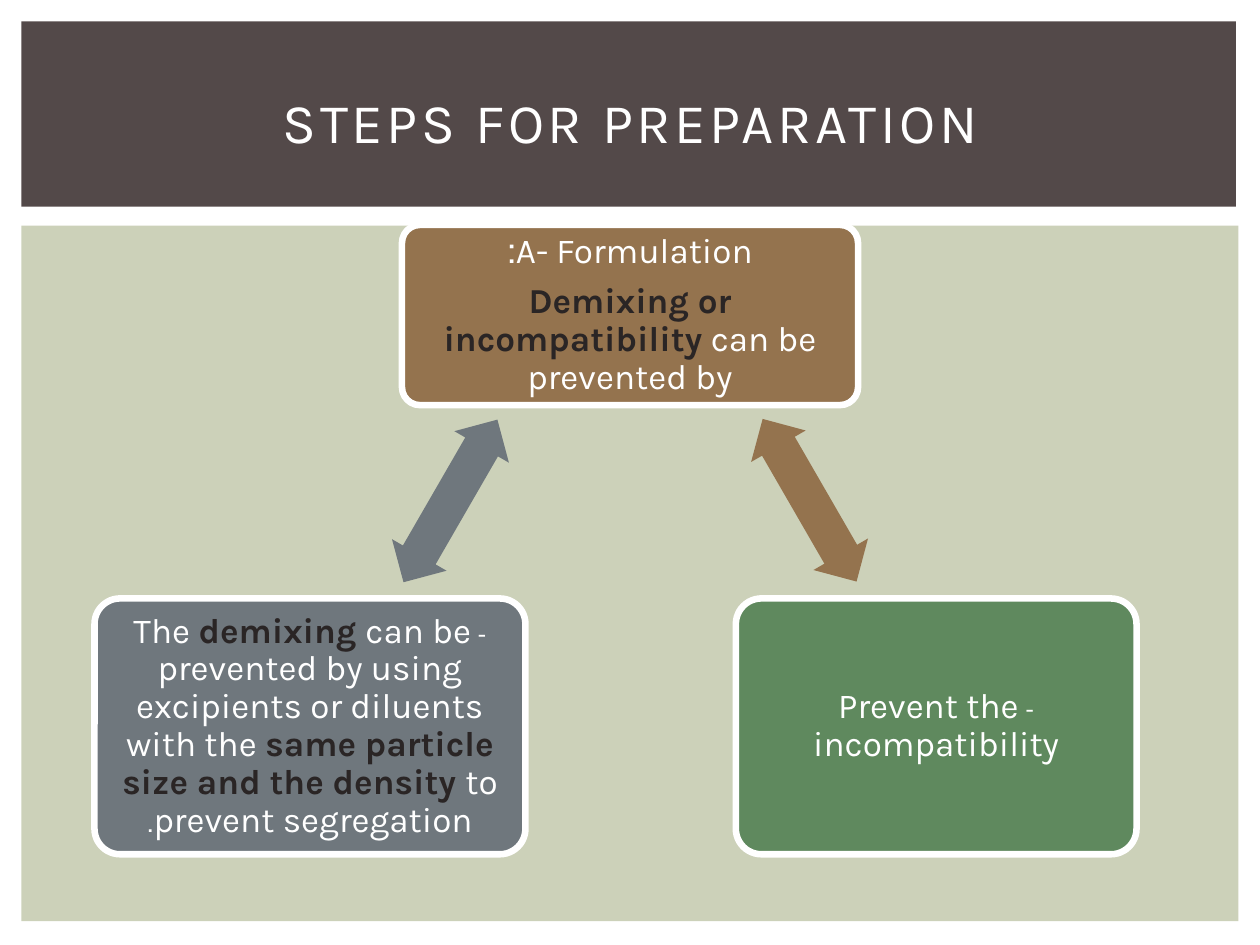
from dataclasses import dataclass

import pptx
import pptx.dml.color
import pptx.enum.shapes
import pptx.enum.text
import pptx.util

WIDTH, HEIGHT = 10, 7.5
FONT = "Karla"
WHITE, DARK = "FFFFFF", "2A2525"
SAGE, UMBER = "CCD1B9", "534949"
BROWN, GREEN, SLATE = "94734E", "5F895E", "6F777D"
SHAPES = pptx.enum.shapes.MSO_SHAPE


@dataclass
class Area:
    left: float
    top: float
    width: float
    height: float

    def lengths(self) -> list:
        shares = ((self.left, WIDTH), (self.top, HEIGHT),
                  (self.width, WIDTH), (self.height, HEIGHT))
        return [pptx.util.Inches(share * full / 100) for share, full in shares]


@dataclass
class Span:
    text: str
    strong: bool = False
    size: int = 20


@dataclass
class Step:
    area: Area
    color: str
    inset: float
    paragraphs: list[list[Span]]


@dataclass
class Arrow:
    area: Area
    color: str
    rotation: int


PANELS = [
    (Area(1.7, 23.87, 96.6, 73.6), SAGE),
    (Area(1.7, 2.27, 96.4, 19.6), UMBER),
]

STEPS = [
    Step(Area(31.9, 23.8, 36.2, 19.07), BROWN, 0.09, [
        [Span("A- Formulation:")],
        [Span("Demixing or incompatibility", True),
         Span(" can be prevented by")],
    ]),
    Step(Area(58.4, 63.33, 31.8, 27.07), GREEN, 0.05, [
        [Span("- ", size=15), Span("Prevent the incompatibility")],
    ]),
    Step(Area(7.5, 63.33, 34.2, 27.07), SLATE, 0.05, [
        [Span("- ", size=15),
         Span("The "),
         Span("demixing ", True),
         Span("can be prevented by using excipients or diluents with the "),
         Span("same particle size and the density ", True),
         Span("to prevent segregation"),
         Span(".", size=15)],
    ]),
]

ARROWS = [
    Arrow(Area(56.8, 49.6, 14.9, 6.67), BROWN, 60),
    Arrow(Area(28.3, 49.67, 14.9, 6.67), SLATE, 300),
]


def rgb(color: str) -> pptx.dml.color.RGBColor:
    return pptx.dml.color.RGBColor.from_string(color)


def add_block(page, preset, area: Area, color: str):
    block = page.shapes.add_shape(preset, *area.lengths())
    block.shadow.inherit = False
    block.fill.solid()
    block.fill.fore_color.rgb = rgb(color)
    block.line.fill.background()
    return block


def add_step(page, step: Step) -> None:
    box = add_block(page, SHAPES.ROUNDED_RECTANGLE, step.area, step.color)
    box.adjustments[0] = 0.1
    box.line.color.rgb = rgb(WHITE)
    box.line.width = pptx.util.Pt(3.75)
    frame = box.text_frame
    frame.word_wrap = True
    frame.vertical_anchor = pptx.enum.text.MSO_ANCHOR.MIDDLE
    inset = pptx.util.Inches(step.inset)
    frame.margin_left = frame.margin_right = inset
    frame.margin_top = frame.margin_bottom = inset
    for index, spans in enumerate(step.paragraphs):
        para = frame.add_paragraph() if index else frame.paragraphs[0]
        para.alignment = pptx.enum.text.PP_ALIGN.CENTER
        para.line_spacing = 0.9
        para.space_after = pptx.util.Pt(7)
        para._p.get_or_add_pPr().set("rtl", "1")
        para.font.name = FONT
        for span in spans:
            run = para.add_run()
            run.text = span.text
            run.font.name = FONT
            run.font.size = pptx.util.Pt(span.size)
            run.font.bold = span.strong
            run.font.color.rgb = rgb(DARK if span.strong else WHITE)


def add_arrow(page, arrow: Arrow) -> None:
    shape = add_block(page, SHAPES.LEFT_RIGHT_ARROW, arrow.area, arrow.color)
    shape.adjustments[0] = 0.6
    shape.adjustments[1] = 0.5
    shape.rotation = arrow.rotation


def set_title(page, text: str, area: Area) -> None:
    title = page.shapes.title
    title.left, title.top, title.width, title.height = area.lengths()
    frame = title.text_frame
    frame.word_wrap = True
    frame.auto_size = pptx.enum.text.MSO_AUTO_SIZE.NONE
    frame.vertical_anchor = pptx.enum.text.MSO_ANCHOR.MIDDLE
    para = frame.paragraphs[0]
    para.alignment = pptx.enum.text.PP_ALIGN.CENTER
    run = para.add_run()
    run.text = text
    run.font.name = FONT
    run.font.size = pptx.util.Pt(32)
    run.font.color.rgb = rgb(WHITE)
    run._r.get_or_add_rPr().set("spc", "200")
    page.shapes._spTree.append(title._element)


def main() -> None:
    deck = pptx.Presentation()
    deck.slide_width = pptx.util.Inches(WIDTH)
    deck.slide_height = pptx.util.Inches(HEIGHT)
    page = deck.slides.add_slide(deck.slide_layouts[5])
    for area, color in PANELS:
        add_block(page, SHAPES.RECTANGLE, area, color)
    for step in STEPS:
        add_step(page, step)
    for arrow in ARROWS:
        add_arrow(page, arrow)
    set_title(page, "STEPS FOR PREPARATION", Area(4.2, 5.2, 91.7, 15.33))
    deck.save("out.pptx")


if __name__ == "__main__":
    main()
